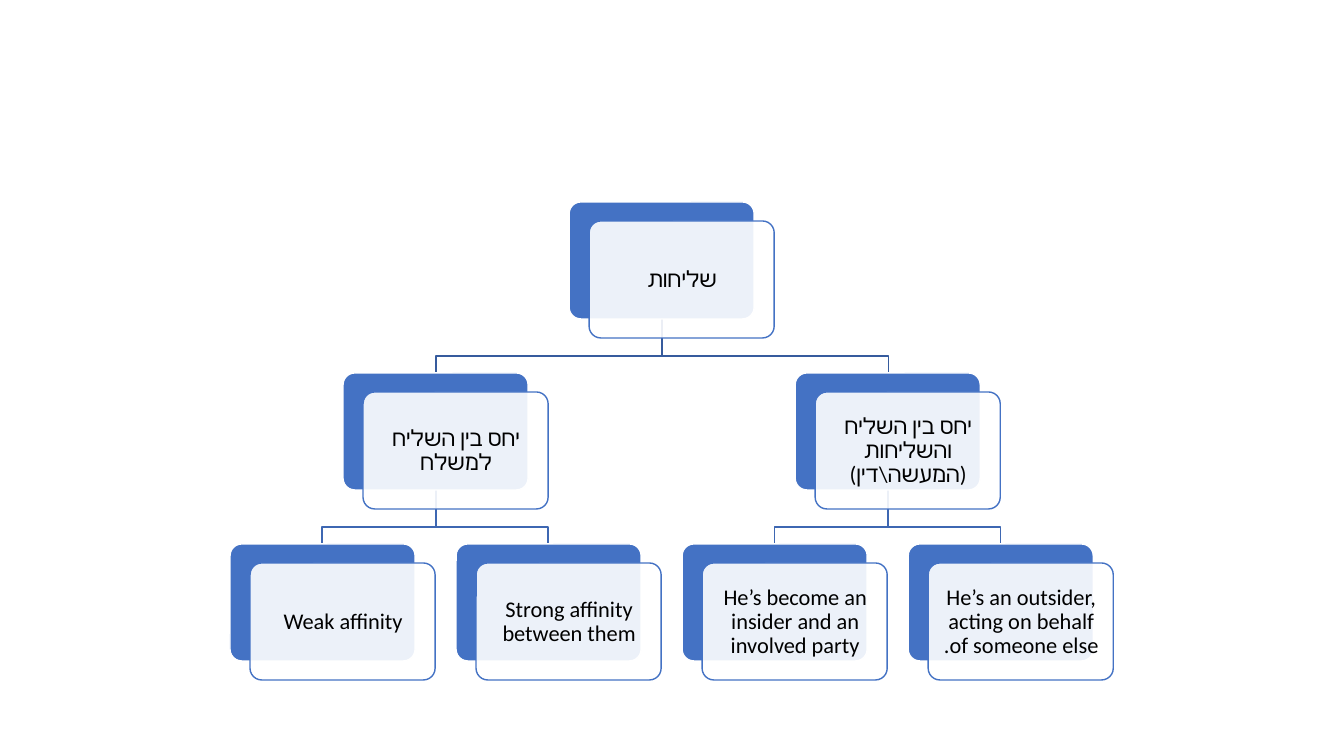
from lxml import etree
from pptx import Presentation
from pptx.dml.color import RGBColor
from pptx.enum.shapes import MSO_SHAPE as SHAPE
from pptx.enum.text import MSO_ANCHOR as ANCHOR, PP_ALIGN as ALIGN
from pptx.oxml.ns import qn
from pptx.util import Emu, Inches, Pt

PX = 914400 / 100.8
BLUE, WHITE, BLACK = "4472C4", "FFFFFF", "000000"
CARD_W, CARD_H = 185, 117
LEFT, TOP, COL_STEP, ROW_STEP = 230, 202, 226, 171


def px(n):
    return Emu(round(n * PX))


def rgb(value):
    return RGBColor.from_string(value)


class Chart:
    font, size = "Calibri", 16

    def __init__(self, slide):
        self.s = slide

    def outline(self, sp, color):
        sp.shadow.inherit = False
        sp.line.color.rgb = rgb(color)
        sp.line.width = Pt(1)

    def box(self, x, y, fill, line, alpha=None):
        sp = self.s.shapes.add_shape(SHAPE.ROUNDED_RECTANGLE, px(x), px(y), px(CARD_W), px(CARD_H))
        sp.adjustments[0] = 0.1
        sp.fill.solid()
        sp.fill.fore_color.rgb = rgb(fill)
        self.outline(sp, line)
        if alpha:
            clr = sp.fill._xPr.find(".//" + qn("a:srgbClr"))
            etree.SubElement(clr, qn("a:alpha"), val=str(alpha * 1000))

    def text(self, x, y, w, h, words):
        tf = self.s.shapes.add_textbox(px(x), px(y), px(w), px(h)).text_frame
        margins = {f"margin_{side}": px(7) for side in ("left", "top", "right", "bottom")}
        for name, value in {"word_wrap": True, "vertical_anchor": ANCHOR.MIDDLE, **margins}.items():
            setattr(tf, name, value)
        p = tf.paragraphs[0]
        p.alignment, p.line_spacing = ALIGN.CENTER, 0.9
        # Right-to-left reading, space after as a share of the line
        pPr = p._p.get_or_add_pPr()
        pPr.set("rtl", "1")
        after = etree.SubElement(pPr, qn("a:spcAft"))
        etree.SubElement(after, qn("a:spcPct"), val="35000")
        r = p.add_run()
        r.text = words
        for name, value in {"name": self.font, "size": Pt(self.size)}.items():
            setattr(r.font, name, value)
        r.font.color.rgb = rgb(BLACK)
        etree.SubElement(r._r.get_or_add_rPr(), qn("a:cs"), typeface=self.font)

    def card(self, x, y, words):
        self.box(x, y, BLUE, WHITE)
        self.box(x + 20, y + 19, WHITE, BLUE, alpha=90)
        self.text(x + 24, y + 23, 178, 111, words)

    def elbow(self, parent, child, color):
        (x1, y1), (x2, y2) = [(x + CARD_W / 2, y) for x, y in (parent, child)]
        bend = y2 - 17
        fb = self.s.shapes.build_freeform(x1, y1 + CARD_H, scale=PX)
        fb.add_line_segments([(x1, bend), (x2, bend), (x2, y2)], close=False)
        sp = fb.convert_to_shape()
        sp.fill.background()
        self.outline(sp, color)


prs = Presentation()
prs.slide_width, prs.slide_height = Inches(13.33), Inches(7.5)
chart = Chart(prs.slides.add_slide(prs.slide_layouts[6]))

# Each level of the tree, from left to right
levels = [
    ["שליחות"],
    ["יחס בין השליח למשלח", "יחס בין השליח והשליחות (המעשה\\דין)"],
    ["Weak affinity", "Strong affinity between them",
     "He’s become an insider and an involved party",
     "He’s an outsider, acting on behalf of someone else."],
]
leaves = len(levels[-1])


def place(row, i):
    """Top left of a card, centred over the leaves below it."""
    span = leaves / len(levels[row])
    return LEFT + COL_STEP * (i * span + (span - 1) / 2), TOP + ROW_STEP * row


# Elbow lines, behind the cards
for row, color in ((1, "365B9D"), (2, "3E67B2")):
    for i in range(len(levels[row])):
        chart.elbow(place(row - 1, i // 2), place(row, i), color)

# Cards
for row, level in enumerate(levels):
    for i, words in enumerate(level):
        chart.card(*place(row, i), words)

prs.save("out.pptx")
